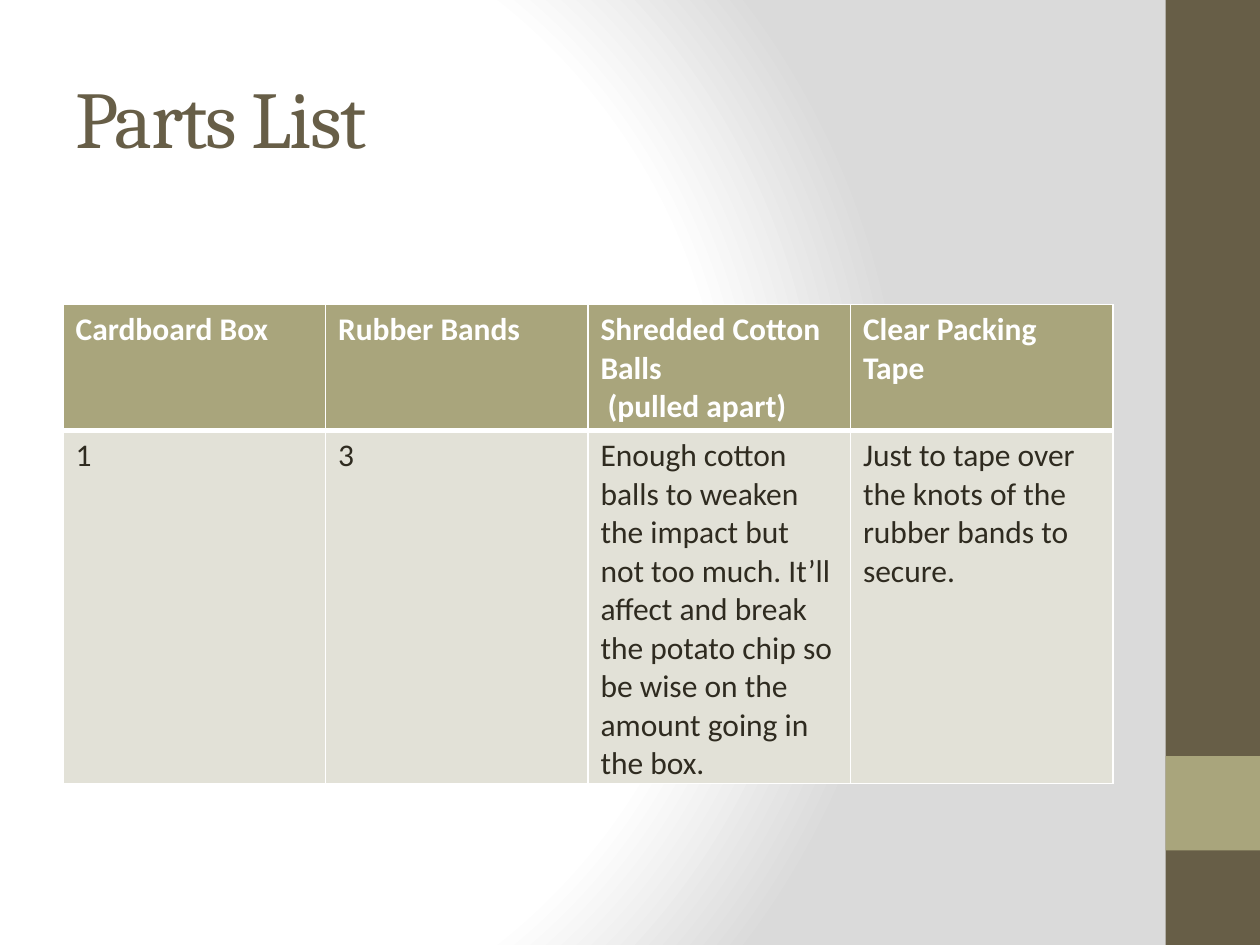
from lxml import etree
from pptx import Presentation
from pptx.dml.color import RGBColor
from pptx.enum.shapes import MSO_SHAPE
from pptx.enum.text import MSO_ANCHOR
from pptx.oxml import parse_xml
from pptx.oxml.ns import nsdecls, qn
from pptx.util import Inches, Pt

RECT = MSO_SHAPE.RECTANGLE
MIDDLE = MSO_ANCHOR.MIDDLE
WHITE = RGBColor(0xFF, 0xFF, 0xFF)
GREY = RGBColor(0xDA, 0xDA, 0xDA)
BROWN = RGBColor(0x67, 0x5E, 0x47)
OLIVE = RGBColor(0xA9, 0xA5, 0x7C)
SAND = RGBColor(0xE2, 0xE1, 0xD7)
INK = RGBColor(0x2F, 0x2B, 0x20)

PARTS = [
    ["Cardboard Box", "Rubber Bands",
     "Shredded Cotton Balls\n (pulled apart)", "Clear Packing Tape"],
    ["1", "3",
     "Enough cotton balls to weaken the impact but not too much. It’ll affect "
     "and break the potato chip so be wise on the amount going in the box.",
     "Just to tape over the knots of the rubber bands to secure."],
]


def write(frame, text, font="Calibri", size=18, color=INK, bold=False, track=0):
    frame.word_wrap = True
    frame.text = text
    for para in frame.paragraphs:
        for run in para.runs:
            run.font.name = font
            run.font.size = Pt(size)
            run.font.bold = bold
            run.font.color.rgb = color
            if track:
                run.font._element.set("spc", str(track * 100))


class Page:
    cols, rows = 40, 30

    def __init__(self, deck):
        self.slide = deck.slides.add_slide(deck.slide_layouts[6])
        self.wide = deck.slide_width / self.cols
        self.high = deck.slide_height / self.rows

    def box(self, left, top, width, height):
        return (int(left * self.wide), int(top * self.high),
                int(width * self.wide), int(height * self.high))

    def glow(self, stops, left, top, right, bottom):
        marks = "".join(
            f'<a:gs pos="{at * 1000}"><a:srgbClr val="{color}"/></a:gs>'
            for at, color in stops)
        back = parse_xml(
            f'<p:bg {nsdecls("p", "a")}><p:bgPr><a:gradFill rotWithShape="1">'
            f'<a:gsLst>{marks}</a:gsLst><a:path path="circle">'
            f'<a:fillToRect l="{left * 1000}" t="{top * 1000}" '
            f'r="{right * 1000}" b="{bottom * 1000}"/></a:path></a:gradFill>'
            '<a:effectLst/></p:bgPr></p:bg>')
        self.slide.element.cSld.insert(0, back)

    def block(self, place, color):
        shape = self.slide.shapes.add_shape(RECT, *self.box(*place))
        shape.shadow.inherit = False
        shape.fill.solid()
        shape.fill.fore_color.rgb = color
        shape.line.fill.background()

    def title(self, place, text):
        frame = self.slide.shapes.add_textbox(*self.box(*place)).text_frame
        frame.vertical_anchor = MIDDLE
        write(frame, text, font="Cambria", size=46, color=BROWN, track=-1)

    def edge(self, cell, side, width):
        line = etree.SubElement(cell._tc.get_or_add_tcPr(), qn(f"a:ln{side}"))
        line.set("w", str(Pt(width)))
        fill = etree.SubElement(line, qn("a:solidFill"))
        etree.SubElement(fill, qn("a:srgbClr")).set("val", str(WHITE))

    def table(self, place, data, heights):
        grid = self.slide.shapes.add_table(
            len(data), len(data[0]), *self.box(*place)).table
        for r, (items, height) in enumerate(zip(data, heights)):
            grid.rows[r].height = int(height * self.high)
            head = r == 0
            for c, text in enumerate(items):
                cell = grid.cell(r, c)
                for side in "LRTB":
                    thick = side == ("B" if head else "T")
                    self.edge(cell, side, 3 if thick else 1)
                cell.fill.solid()
                cell.fill.fore_color.rgb = OLIVE if head else SAND
                write(cell.text_frame, text, bold=head,
                      color=WHITE if head else INK)


def main():
    deck = Presentation()
    deck.slide_width, deck.slide_height = Inches(10), Inches(7.5)
    page = Page(deck)
    page.glow([(0, WHITE), (75, WHITE), (100, GREY)], 20, 50, 100, 50)
    page.block((37, 0, 3, 30), BROWN)
    page.block((37, 24, 3, 3), OLIVE)
    page.title((2, 1.2, 33.33, 5), "Parts List")
    page.table((2, 9.67, 33.33, 15.2), PARTS, (4, 11.2))
    deck.save("out.pptx")


if __name__ == "__main__":
    main()
